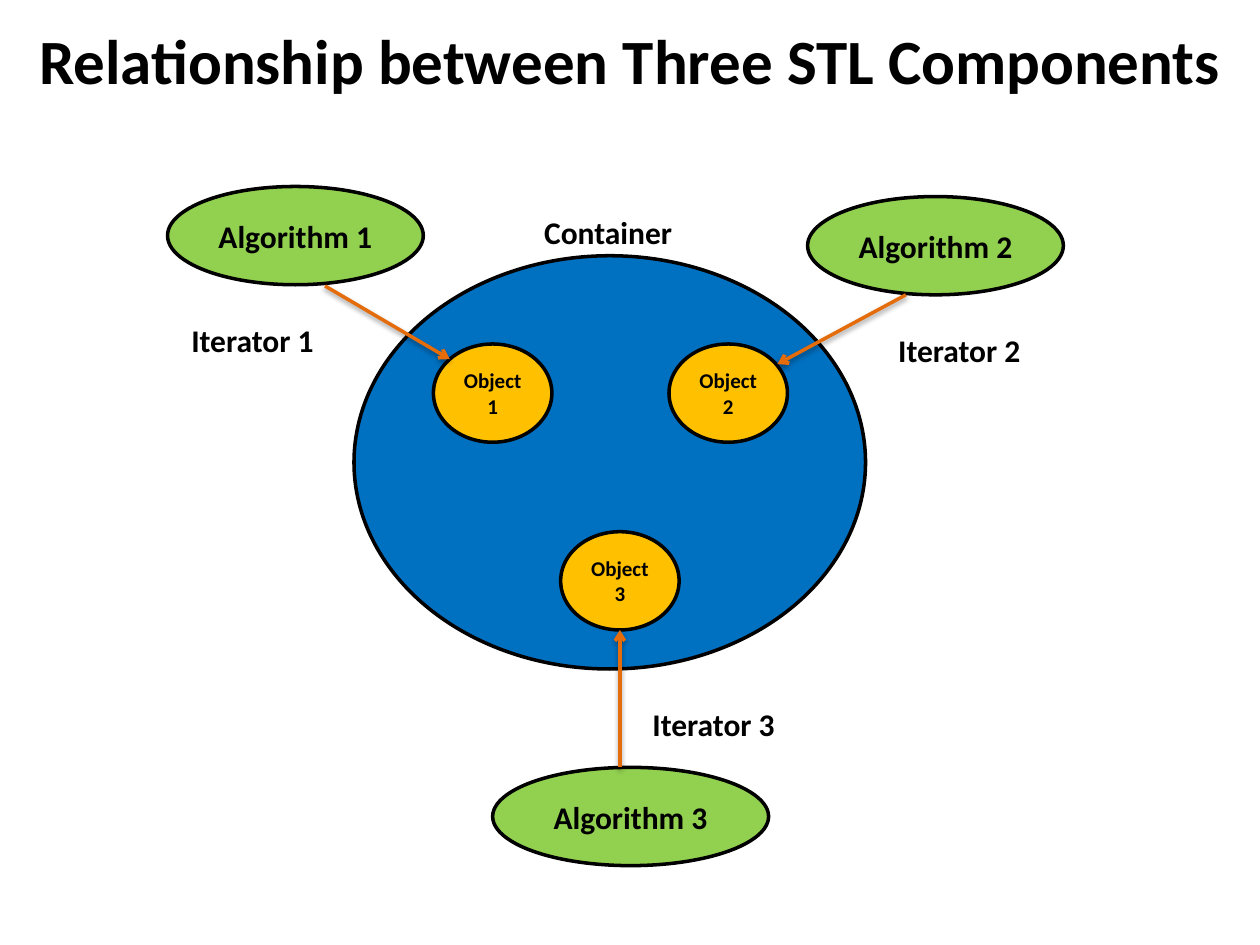
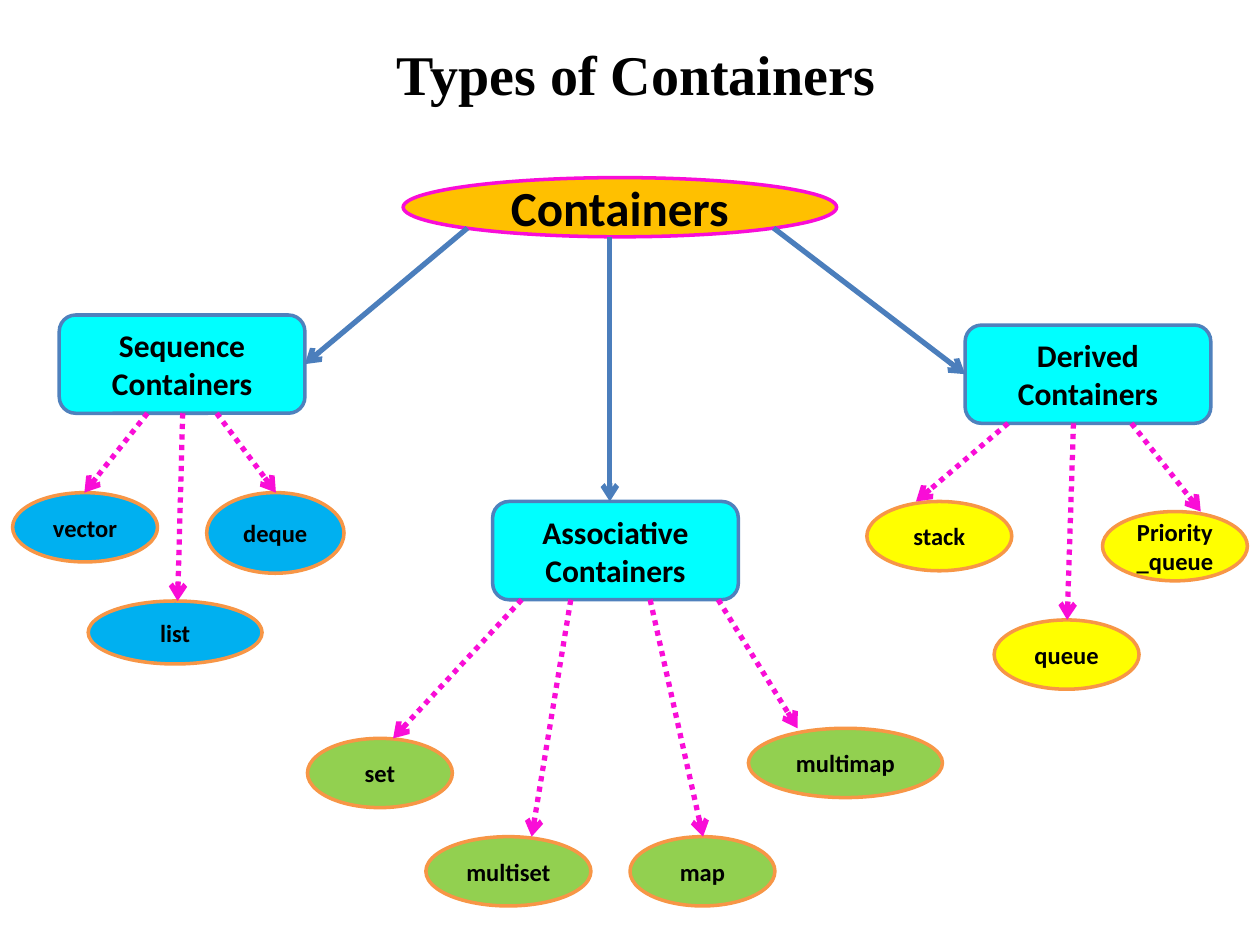
from lxml import etree
from pptx import Presentation, util as u
from pptx.dml.color import RGBColor
from pptx.enum import dml, shapes, text
from pptx.oxml.ns import qn

BLACK = RGBColor(0, 0, 0)
BLUE = RGBColor(0x00, 0x70, 0xC0)
AMBER = RGBColor(0xFF, 0xC0, 0x00)
GREEN = RGBColor(0x92, 0xD0, 0x50)
RUST = RGBColor(0xE4, 0x6C, 0x0A)
PINK = RGBColor(0xF9, 0x0D, 0xD7)
CYAN = RGBColor(0x00, 0xFF, 0xFF)
SKY = RGBColor(0x00, 0xB0, 0xF0)
YELLOW = RGBColor(0xFF, 0xFF, 0x00)
ORANGE = RGBColor(0xF7, 0x96, 0x46)
STEEL = RGBColor(0x4F, 0x81, 0xBD)
SLATE = RGBColor(0x4B, 0x7E, 0xBC)
OVAL = shapes.MSO_SHAPE.OVAL
ROUND = shapes.MSO_SHAPE.ROUNDED_RECTANGLE
CENTER = text.PP_ALIGN.CENTER
LEFT = text.PP_ALIGN.LEFT
NODE_H = 0.78
LEAF_H = 0.55


def inches(box):
    return [u.Inches(v) for v in box]


def write(frame, words, size, align=CENTER, face="Calibri"):
    frame.word_wrap = True
    para = frame.paragraphs[0]
    para.alignment = align
    run = para.add_run()
    run.text = words
    font = run.font
    font.name, font.size, font.bold = face, u.Pt(size), True
    font.color.rgb = BLACK


def title(slide, box, words, size, face="Calibri"):
    frame = slide.shapes.add_textbox(*inches(box)).text_frame
    frame.vertical_anchor = text.MSO_ANCHOR.MIDDLE
    write(frame, words, size, face=face)


def label(slide, x, y, words, width=1.33):
    area = slide.shapes.add_textbox(*inches((x, y, width, 0.4)))
    write(area.text_frame, words, 18, LEFT)


def node(slide, box, fill, words="", size=18, line=BLACK, kind=OVAL):
    shape = slide.shapes.add_shape(kind, *inches(box))
    shape.shadow.inherit = False
    shape.fill.solid()
    shape.fill.fore_color.rgb = fill
    shape.line.color.rgb = line
    shape.line.width = u.Pt(2)
    if words:
        frame = shape.text_frame
        frame.vertical_anchor = text.MSO_ANCHOR.MIDDLE
        frame.margin_left = frame.margin_right = u.Inches(0.08)
        write(frame, words, size)


def arrow(slide, start, end, color, width=3, dots=False, shade=False):
    link = slide.shapes.add_connector(
        shapes.MSO_CONNECTOR.STRAIGHT, *inches(start + end))
    link.line.color.rgb = color
    link.line.width = u.Pt(width)
    if dots:
        link.line.dash_style = dml.MSO_LINE.ROUND_DOT
    props = link.line._get_or_add_ln()
    etree.SubElement(props, qn("a:tailEnd"), type="arrow")
    effects = etree.SubElement(props.getparent(), qn("a:effectLst"))
    if shade:
        outer = etree.SubElement(
            effects, qn("a:outerShdw"), blurRad=str(u.Pt(3.1)),
            dist=str(u.Pt(1.6)), dir="5400000", rotWithShape="0")
        tint = etree.SubElement(outer, qn("a:srgbClr"), val=str(BLACK))
        etree.SubElement(tint, qn("a:alpha"), val="38000")


def chain(slide, num, algo, item, start, end, note):
    """Algorithm, its iterator arrow and the object it reaches."""
    node(slide, (*item, 0.94, NODE_H), AMBER, f"Object {num}", 12)
    node(slide, (*algo, NODE_H), GREEN, f"Algorithm {num}")
    arrow(slide, start, end, RUST, 2, shade=True)
    label(slide, *note, f"Iterator {num}")


def relations(slide):
    title(slide, (0, 0, 10, 0.94),
          "Relationship between Three STL Components", 36)
    node(slide, (2.81, 2.03, 4.06, 3.28), BLUE)
    label(slide, 4.22, 1.64, "Container", 1.88)
    chain(slide, 1, (1.33, 1.48, 2.03), (3.44, 2.73),
          (2.58, 2.27), (3.57, 2.85), (1.42, 2.5))
    chain(slide, 2, (6.41, 1.56, 2.03), (5.31, 2.73),
          (7.19, 2.34), (6.17, 2.89), (7.03, 2.58))
    chain(slide, 3, (3.91, 6.09, 2.19), (4.45, 4.22),
          (4.92, 6.09), (4.92, 5), (5.08, 5.55))


def family(slide, x, y, name, fill, leaves):
    """Group box at x, y; each leaf has its box, arrow start and arrow end
    measured from that corner."""
    node(slide, (x, y, 1.95, NODE_H), CYAN, f"{name} Containers",
         line=STEEL, kind=ROUND)
    for words, (dx, dy, wide, high), start, end in leaves:
        node(slide, (x + dx, y + dy, wide, high), fill, words, 14, ORANGE)
        arrow(slide, (x + start, y + NODE_H), (x + end, y + dy),
              PINK, dots=True)


def types(slide):
    title(slide, (0.55, 0.23, 9, 0.7), "Types of Containers", 32,
          "Times New Roman")
    node(slide, (3.2, 1.41, 3.44, 0.47), AMBER, "Containers", 28, PINK)
    family(slide, 0.47, 2.5, "Sequence", SKY, [
        ("vector", (-0.37, 1.41, 1.15, LEAF_H), 0.7, 0.2),
        ("list", (0.23, 2.27, 1.38, 0.5), 0.98, 0.94),
        ("deque", (1.17, 1.41, 1.09, 0.64), 1.25, 1.72)])
    family(slide, 7.66, 2.58, "Derived", YELLOW, [
        ("stack", (-0.78, 1.4, 1.15, LEAF_H), 0.34, -0.39),
        ("queue", (0.23, 2.34, 1.15, LEAF_H), 0.86, 0.81),
        ("Priority _queue", (1.09, 1.48, 1.15, LEAF_H), 1.32, 1.87)])
    family(slide, 3.91, 3.98, "Associative", GREEN, [
        ("set", (-1.47, 1.88, 1.15, LEAF_H), 0.23, -0.79),
        ("multiset", (-0.53, 2.66, 1.31, LEAF_H), 0.62, 0.31),
        ("map", (1.09, 2.66, 1.15, LEAF_H), 1.25, 1.67),
        ("multimap", (2.03, 1.8, 1.54, LEAF_H), 1.79, 2.42)])
    for start, end in [((3.71, 1.81), (2.42, 2.89)),
                       ((6.14, 1.81), (7.66, 2.97)),
                       ((4.84, 1.88), (4.84, 3.98))]:
        arrow(slide, start, end, SLATE)


def main():
    deck = Presentation()
    deck.slide_width, deck.slide_height = u.Inches(10), u.Inches(7.5)
    for build in (relations, types):
        build(deck.slides.add_slide(deck.slide_layouts[6]))
    deck.save("out.pptx")


if __name__ == "__main__":
    main()
